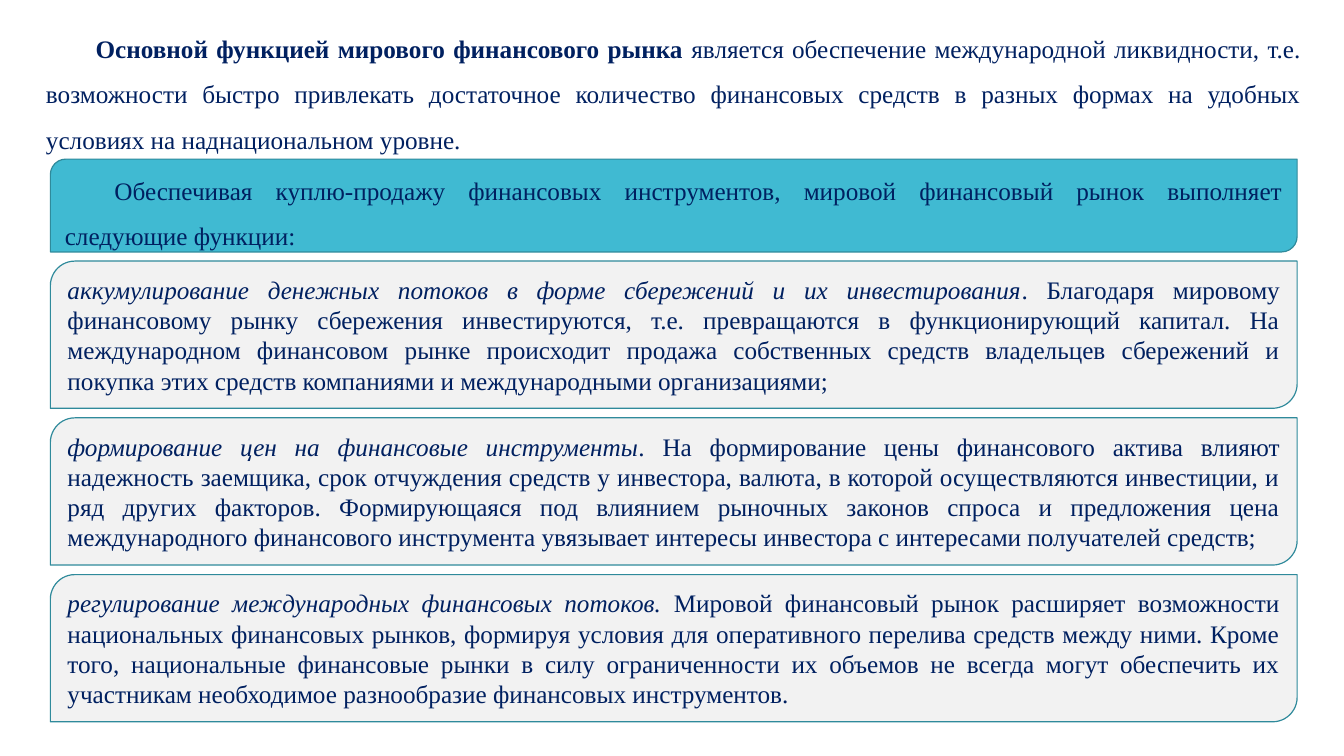
from dataclasses import dataclass

from lxml import etree
from pptx import Presentation
from pptx.dml.color import RGBColor
from pptx.enum.shapes import MSO_SHAPE
from pptx.enum.text import MSO_ANCHOR, MSO_AUTO_SIZE, PP_ALIGN
from pptx.oxml.ns import qn
from pptx.slide import Slide
from pptx.text.text import TextFrame
from pptx.util import Cm, Pt

PANEL_SHAPE = MSO_SHAPE.ROUND_2_DIAG_RECTANGLE
MIDDLE = MSO_ANCHOR.MIDDLE
JUSTIFY = PP_ALIGN.JUSTIFY
GROW = MSO_AUTO_SIZE.SHAPE_TO_FIT_TEXT

FONT = "Times New Roman"
NAVY, TEAL, DARK_TEAL, PALE_GREY = "002060", "40BAD2", "2F8A9B", "F2F2F2"
FIRST_LINE = Cm(1.25)
PANEL_LEFT, PANEL_WIDTH = 1.27, 31.42
FUNCTION_TOP, FUNCTION_HEIGHT, FUNCTION_STEP = 6.58, 3.71, 3.95


@dataclass
class Passage:
    """Text whose lead may be bold or italic."""
    lead: str
    rest: str = ""
    bold: bool = False
    italic: bool = False
    indented: bool = False


@dataclass
class Panel:
    top: float
    height: float
    fill: str
    passage: Passage


INTRO = Passage(
    "Основной функцией мирового финансового рынка ",
    "является обеспечение международной ликвидности, т.е. возможности быстро "
    "привлекать достаточное количество финансовых средств в разных формах на "
    "удобных условиях на наднациональном уровне.",
    bold=True, indented=True)

HEADING = Passage(
    "Обеспечивая куплю-продажу финансовых инструментов, мировой финансовый "
    "рынок выполняет следующие функции:", indented=True)

FUNCTIONS = [
    Passage(
        "аккумулирование денежных потоков в форме сбережений и их инвестирования",
        ". Благодаря мировому финансовому рынку сбережения инвестируются, т.е. "
        "превращаются в функционирующий капитал. На международном финансовом рынке "
        "происходит продажа собственных средств владельцев сбережений и покупка этих "
        "средств компаниями и международными организациями;", italic=True),
    Passage(
        "формирование цен на финансовые инструменты",
        ". На формирование цены финансового актива влияют надежность заемщика, срок "
        "отчуждения средств у инвестора, валюта, в которой осуществляются инвестиции, "
        "и ряд других факторов. Формирующаяся под влиянием рыночных законов спроса и "
        "предложения цена международного финансового инструмента увязывает интересы "
        "инвестора с интересами получателей средств;", italic=True),
    Passage(
        "регулирование международных финансовых потоков.",
        " Мировой финансовый рынок расширяет возможности национальных финансовых "
        "рынков, формируя условия для оперативного перелива средств между ними. Кроме "
        "того, национальные финансовые рынки в силу ограниченности их объемов не "
        "всегда могут обеспечить их участникам необходимое разнообразие финансовых "
        "инструментов.", italic=True),
]

PANELS = [Panel(4.01, 2.34, TEAL, HEADING)] + [
    Panel(FUNCTION_TOP + row * FUNCTION_STEP, FUNCTION_HEIGHT, PALE_GREY, passage)
    for row, passage in enumerate(FUNCTIONS)
]


def color(value: str) -> RGBColor:
    return RGBColor.from_string(value)


def write_passage(frame: TextFrame, passage: Passage) -> None:
    frame.word_wrap = True
    para = frame.paragraphs[0]
    para.alignment = JUSTIFY
    if passage.indented:
        para.line_spacing = 1.5
        properties = para._p.get_or_add_pPr()
        properties.set("marL", "0")
        properties.set("indent", str(FIRST_LINE))
        tabs = etree.SubElement(properties, qn("a:tabLst"))
        etree.SubElement(tabs, qn("a:tab"), pos=str(FIRST_LINE), algn="l")
    para.font.name = FONT
    para.font.size = Pt(18)
    para.font.color.rgb = color(NAVY)

    lead = para.add_run()
    lead.text = passage.lead
    if passage.bold:
        lead.font.bold = True
    if passage.italic:
        lead.font.italic = True
    if passage.rest:
        para.add_run().text = passage.rest


def add_intro(page: Slide) -> None:
    box = page.shapes.add_textbox(Cm(0.91), Cm(0.33), Cm(32.13), Cm(3.61))
    write_passage(box.text_frame, INTRO)
    box.text_frame.auto_size = GROW


def add_panel(page: Slide, panel: Panel) -> None:
    shape = page.shapes.add_shape(
        PANEL_SHAPE, Cm(PANEL_LEFT), Cm(panel.top), Cm(PANEL_WIDTH), Cm(panel.height))
    shape.shadow.inherit = False
    shape.fill.solid()
    shape.fill.fore_color.rgb = color(panel.fill)
    shape.line.color.rgb = color(DARK_TEAL)
    shape.line.width = Pt(0.85)
    shape.text_frame.vertical_anchor = MIDDLE
    write_passage(shape.text_frame, panel.passage)


def main() -> None:
    deck = Presentation()
    deck.slide_width, deck.slide_height = Cm(33.87), Cm(19.05)
    page = deck.slides.add_slide(deck.slide_layouts[6])
    add_intro(page)
    for panel in PANELS:
        add_panel(page, panel)
    deck.save("out.pptx")


if __name__ == "__main__":
    main()
